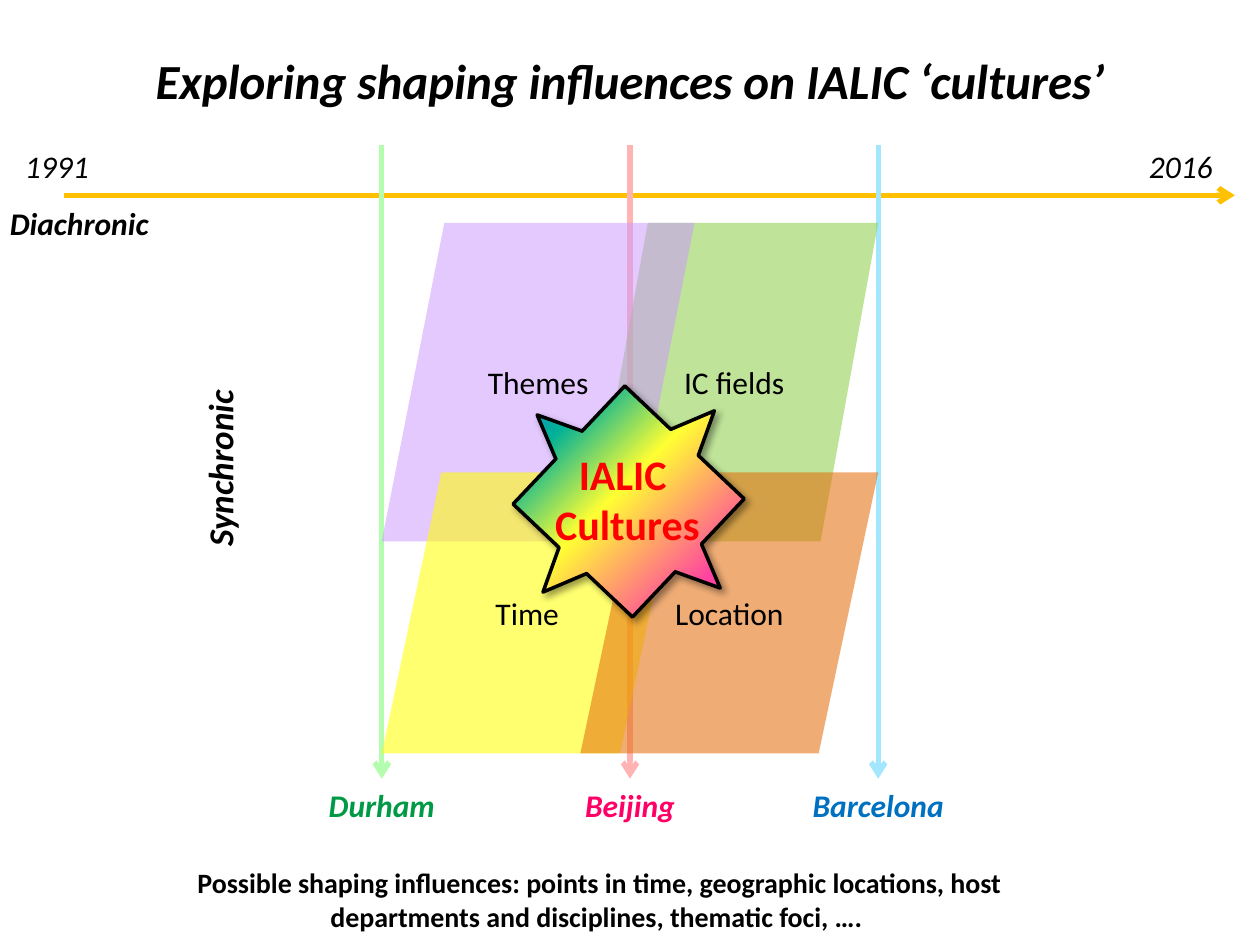
from collections import namedtuple

from lxml import etree
from pptx import Presentation
from pptx.dml.color import RGBColor
from pptx.enum.shapes import MSO_CONNECTOR, MSO_SHAPE
from pptx.enum.text import MSO_ANCHOR, MSO_AUTO_SIZE, PP_ALIGN
from pptx.oxml import parse_xml
from pptx.oxml.ns import nsdecls, qn
from pptx.util import Inches, Pt

FONT = "Calibri"
COLORS = {
    "ink": "000000", "diachronic": "FFC000", "cultures": "FF0000",
    "durham line": "B4FCAE", "beijing line": "FFB3B3", "barcelona line": "A3E7FF",
    "durham": "009A46", "beijing": "FF0066", "barcelona": "0070C0",
    "fields": "92D050", "themes": "CC99FF", "time": "FFFF00", "location": "E46C0A",
}
STAR_STOPS = [(0, "FF6633"), (28, "FF43A1"), (53, "FFFF33"), (70, "01B198"), (88, "3366FF")]


class Box(namedtuple("Box", "left top width height")):
    def inner(self, left, top, width, height):
        """Return an inner box given as shares of this one."""
        return Box(self.left + left * self.width, self.top + top * self.height,
                   width * self.width, height * self.height)

    def emu(self):
        return [Inches(length) for length in self]


def rgb(name):
    return RGBColor.from_string(COLORS[name])


def write(frame, lines, size, color="ink", bold=False, italic=False,
          align=PP_ALIGN.CENTER, wrap=True):
    frame.text = lines
    frame.word_wrap = wrap
    for paragraph in frame.paragraphs:
        paragraph.alignment = align
        font = paragraph.font
        font.name, font.size = FONT, Pt(size)
        font.bold, font.italic = bold, italic
        font.color.rgb = rgb(color)


def add_label(slide, box, lines, size=18, rotation=0, **style):
    label = slide.shapes.add_textbox(*box.emu())
    write(label.text_frame, lines, size, **style)
    label.text_frame.auto_size = MSO_AUTO_SIZE.SHAPE_TO_FIT_TEXT
    label.rotation = rotation


def add_arrow(slide, start, end, color):
    arrow = slide.shapes.add_connector(
        MSO_CONNECTOR.STRAIGHT, *(Inches(length) for length in start + end))
    arrow.line.color.rgb = rgb(color)
    arrow.line.width = Pt(3)
    properties = arrow._element.spPr
    etree.SubElement(properties.find(qn("a:ln")), qn("a:tailEnd"), type="arrow")
    etree.SubElement(properties, qn("a:effectLst"))


def place_title(slide, box):
    title = slide.shapes.title
    title.left, title.top, title.width, title.height = box.emu()
    frame = title.text_frame
    write(frame, "Exploring shaping influences on IALIC ‘cultures’", 28,
          bold=True, italic=True, wrap=False)
    frame.vertical_anchor = MSO_ANCHOR.TOP
    frame.auto_size = MSO_AUTO_SIZE.NONE


def add_timeline(slide, box):
    axis = box.top + box.height / 2
    add_arrow(slide, (box.left + 0.51, axis), (box.left + 9.8, axis), "diachronic")
    for year, left in (("1991", 0.01), ("2016", 0.902)):
        add_label(slide, box.inner(left, 0, 0.11, 0.47), year,
                  italic=True, align=PP_ALIGN.LEFT)
    add_label(slide, box.inner(-0.002, 0.52, 0.2, 0.47), "Diachronic",
              bold=True, italic=True, align=PP_ALIGN.LEFT)


def add_places(slide, box):
    """Draw three evenly spaced downward arrows with the place names below."""
    for column, place in enumerate(("Durham", "Beijing", "Barcelona")):
        x = box.left + column * box.width / 2
        bottom = box.top + box.height
        key = place.lower()
        add_arrow(slide, (x, box.top), (x, bottom), f"{key} line")
        add_label(slide, Box(x - 0.7, bottom + 0.01, 1.4, 0.4), place,
                  color=key, bold=True, italic=True)


def add_influences(slide, box):
    panels = (
        ("IC fields", "fields", 58, (0.42, 0, 0.58, 0.6)),
        ("Themes", "themes", 53, (0, 0, 0.63, 0.6)),
        ("Time ", "time", 56, (0, 0.47, 0.6, 0.53)),
        ("Location", "location", 56, (0.4, 0.47, 0.6, 0.53)),
    )
    for name, color, opacity, share in panels:
        panel = slide.shapes.add_shape(MSO_SHAPE.FLOWCHART_DATA, *box.inner(*share).emu())
        panel.shadow.inherit = False
        panel.line.fill.background()
        panel.fill.solid()
        panel.fill.fore_color.rgb = rgb(color)
        tint = panel._element.spPr.find(f".//{qn('a:srgbClr')}")
        etree.SubElement(tint, qn("a:alpha"), val=str(opacity * 1000))
        write(panel.text_frame, name, 18)
        panel.text_frame.vertical_anchor = MSO_ANCHOR.MIDDLE


def add_star(slide, box):
    star = slide.shapes.add_shape(MSO_SHAPE.QUAD_ARROW_CALLOUT, *box.emu())
    star.rotation = 313.4
    for index, value in enumerate((0.152, 0.076, 0.174, 0.652)):
        star.adjustments[index] = value
    star.line.color.rgb = rgb("ink")
    star.line.width = Pt(2)
    stops = "".join(f'<a:gs pos="{pos * 1000}"><a:srgbClr val="{color}"/></a:gs>'
                    for pos, color in STAR_STOPS)
    properties = star._element.spPr
    properties.find(qn("a:prstGeom")).addnext(parse_xml(
        f'<a:gradFill {nsdecls("a")} rotWithShape="1"><a:gsLst>{stops}</a:gsLst>'
        '<a:path path="circle"><a:fillToRect l="100000" t="100000"/></a:path>'
        '</a:gradFill>'))
    properties.append(parse_xml(
        f'<a:effectLst {nsdecls("a")}><a:outerShdw blurRad="{Pt(4)}" dist="{Pt(3)}" '
        f'dir="2700000" algn="tl" rotWithShape="0"><a:srgbClr val="{COLORS["ink"]}">'
        '<a:alpha val="40000"/></a:srgbClr></a:outerShdw></a:effectLst>'))
    add_label(slide, box.inner(0.15, 0.265, 0.69, 0.455), "IALIC \nCultures", 24,
              color="cultures", bold=True, wrap=False)


def main():
    deck = Presentation()
    deck.slide_width, deck.slide_height = Inches(10), Inches(7.5)
    slide = deck.slides.add_slide(deck.slide_layouts[5])
    place_title(slide, Box(1.03, 0.35, 7.94, 0.57))
    add_timeline(slide, Box(0, 1.12, 10, 0.86))
    add_places(slide, Box(3.03, 1.15, 3.94, 5.03))
    add_label(slide, Box(0.89, 3.36, 1.71, 0.44), "Synchronic", 20, rotation=270,
              bold=True, italic=True, align=PP_ALIGN.LEFT)
    add_label(slide, Box(1.06, 6.82, 7.4, 0.64),
              "Possible shaping influences: points in time, geographic locations, "
              "host departments and disciplines, thematic foci, …. ", 16, bold=True)
    add_influences(slide, Box(3.03, 1.77, 3.94, 4.21))
    add_star(slide, Box(4, 2.98, 1.98, 2))
    deck.save("out.pptx")


if __name__ == "__main__":
    main()
